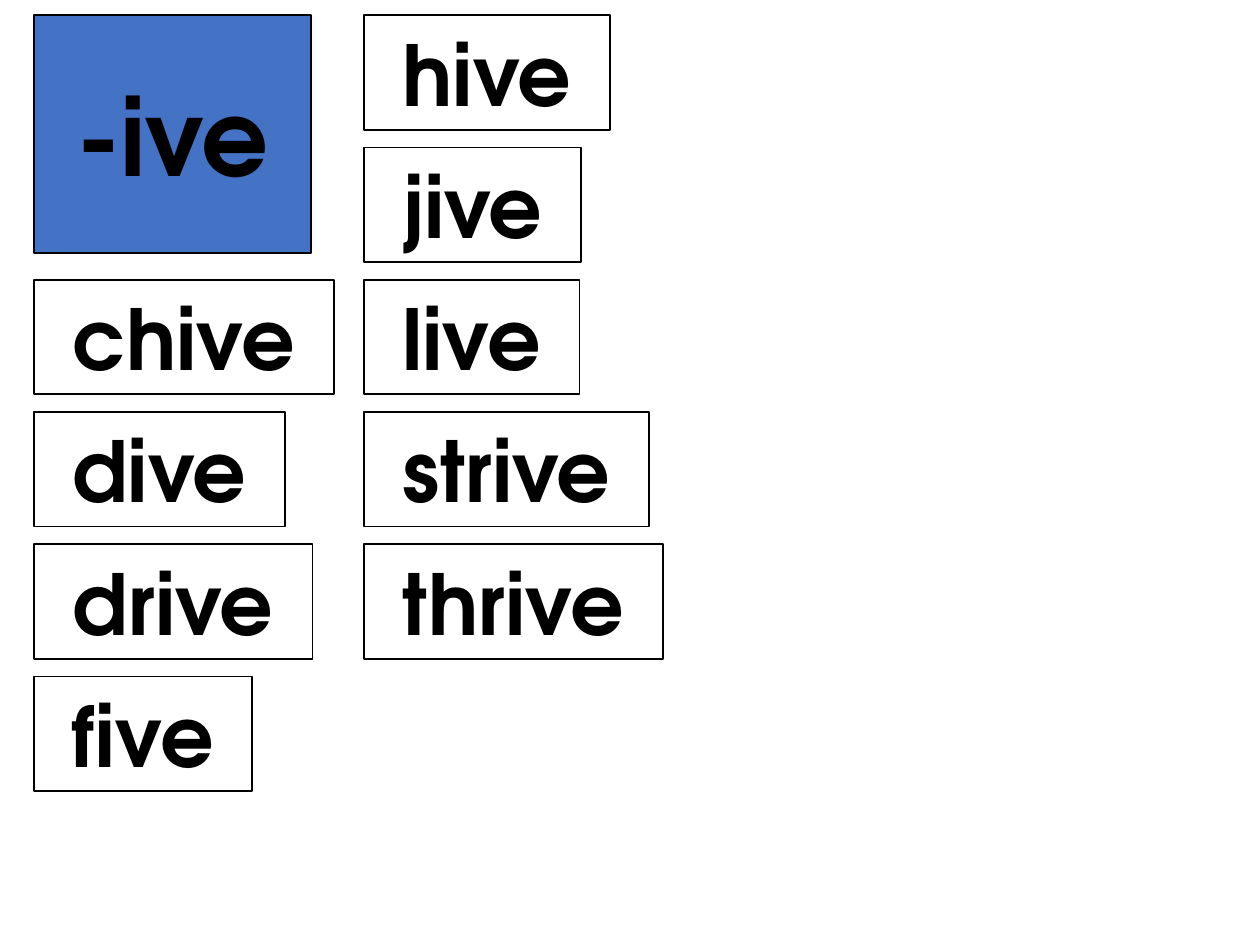
from dataclasses import dataclass

from pptx import Presentation
from pptx.dml.color import RGBColor
from pptx.enum.shapes import MSO_SHAPE
from pptx.enum.text import MSO_ANCHOR, MSO_AUTO_SIZE, PP_ALIGN
from pptx.util import Emu, Pt

RECTANGLE = MSO_SHAPE.RECTANGLE
CENTER = PP_ALIGN.CENTER
MIDDLE = MSO_ANCHOR.MIDDLE
NO_AUTOFIT = MSO_AUTO_SIZE.NONE
TITLE_ONLY_LAYOUT = 5
EMU_PER_PX = 9144  # 100 px to the inch


@dataclass(frozen=True)
class Theme:
    font: str = "TeX Gyre Adventor"
    ink: RGBColor = RGBColor(0x00, 0x00, 0x00)
    card: RGBColor = RGBColor(0xFF, 0xFF, 0xFF)
    heading: RGBColor = RGBColor(0x44, 0x72, 0xC4)
    word_size: int = 48
    heading_size: int = 60
    line_width: int = 1


@dataclass(frozen=True)
class WordCard:
    word: str
    column: int
    row: int
    width: int


THEME = Theme()

# Card grid, in px
COLUMN_LEFTS = (27, 289)
FIRST_TOP = 12
ROW_STEP = 105
CARD_HEIGHT = 91
HEADING_WIDTH, HEADING_HEIGHT = 220, 189

WORD_CARDS = (
    WordCard("hive", 1, 0, 195),
    WordCard("jive", 1, 1, 172),
    WordCard("live", 1, 2, 171),
    WordCard("strive", 1, 3, 226),
    WordCard("thrive", 1, 4, 237),
    WordCard("chive", 0, 2, 238),
    WordCard("dive", 0, 3, 199),
    WordCard("drive", 0, 4, 221),
    WordCard("five", 0, 5, 173),
)


def px(length: int) -> Emu:
    return Emu(length * EMU_PER_PX)


def style_card(shape, text: str, fill: RGBColor, size: int, wrap: bool) -> None:
    """Fill and outline a card and set its centred bold text."""
    shape.shadow.inherit = False
    shape.fill.solid()
    shape.fill.fore_color.rgb = fill
    shape.line.color.rgb = THEME.ink
    shape.line.width = Pt(THEME.line_width)

    frame = shape.text_frame
    frame.text = text
    frame_format = {"word_wrap": wrap, "auto_size": NO_AUTOFIT, "vertical_anchor": MIDDLE}
    for name, value in frame_format.items():
        setattr(frame, name, value)

    paragraph = frame.paragraphs[0]
    paragraph.alignment = CENTER
    font = paragraph.runs[0].font
    for name, value in {"name": THEME.font, "size": Pt(size), "bold": True}.items():
        setattr(font, name, value)
    font.color.rgb = THEME.ink


def draw_heading(slide, text: str) -> None:
    title = slide.shapes.title
    position = {
        "left": COLUMN_LEFTS[0],
        "top": FIRST_TOP,
        "width": HEADING_WIDTH,
        "height": HEADING_HEIGHT,
    }
    for name, value in position.items():
        setattr(title, name, px(value))
    style_card(title, text, THEME.heading, THEME.heading_size, True)


def draw_word_card(slide, card: WordCard) -> None:
    shape = slide.shapes.add_shape(
        RECTANGLE,
        px(COLUMN_LEFTS[card.column]),
        px(FIRST_TOP + card.row * ROW_STEP),
        px(card.width),
        px(CARD_HEIGHT),
    )
    style_card(shape, card.word, THEME.card, THEME.word_size, False)


def main() -> None:
    presentation = Presentation()
    presentation.slide_width = px(1000)
    presentation.slide_height = px(750)
    slide = presentation.slides.add_slide(presentation.slide_layouts[TITLE_ONLY_LAYOUT])

    # Word family heading
    draw_heading(slide, "-ive")

    # Words of the family
    for card in WORD_CARDS:
        draw_word_card(slide, card)

    presentation.save("out.pptx")


if __name__ == "__main__":
    main()
